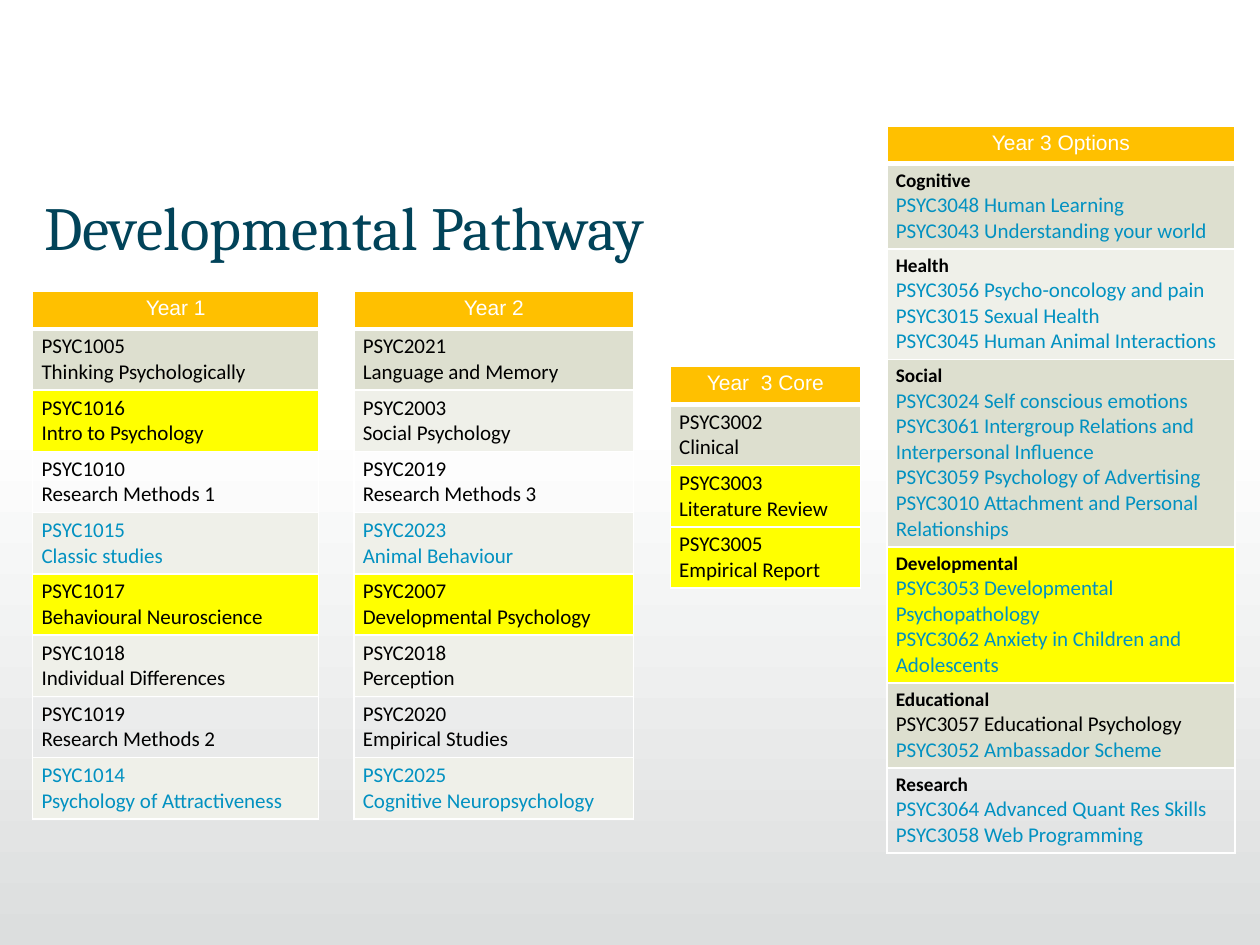
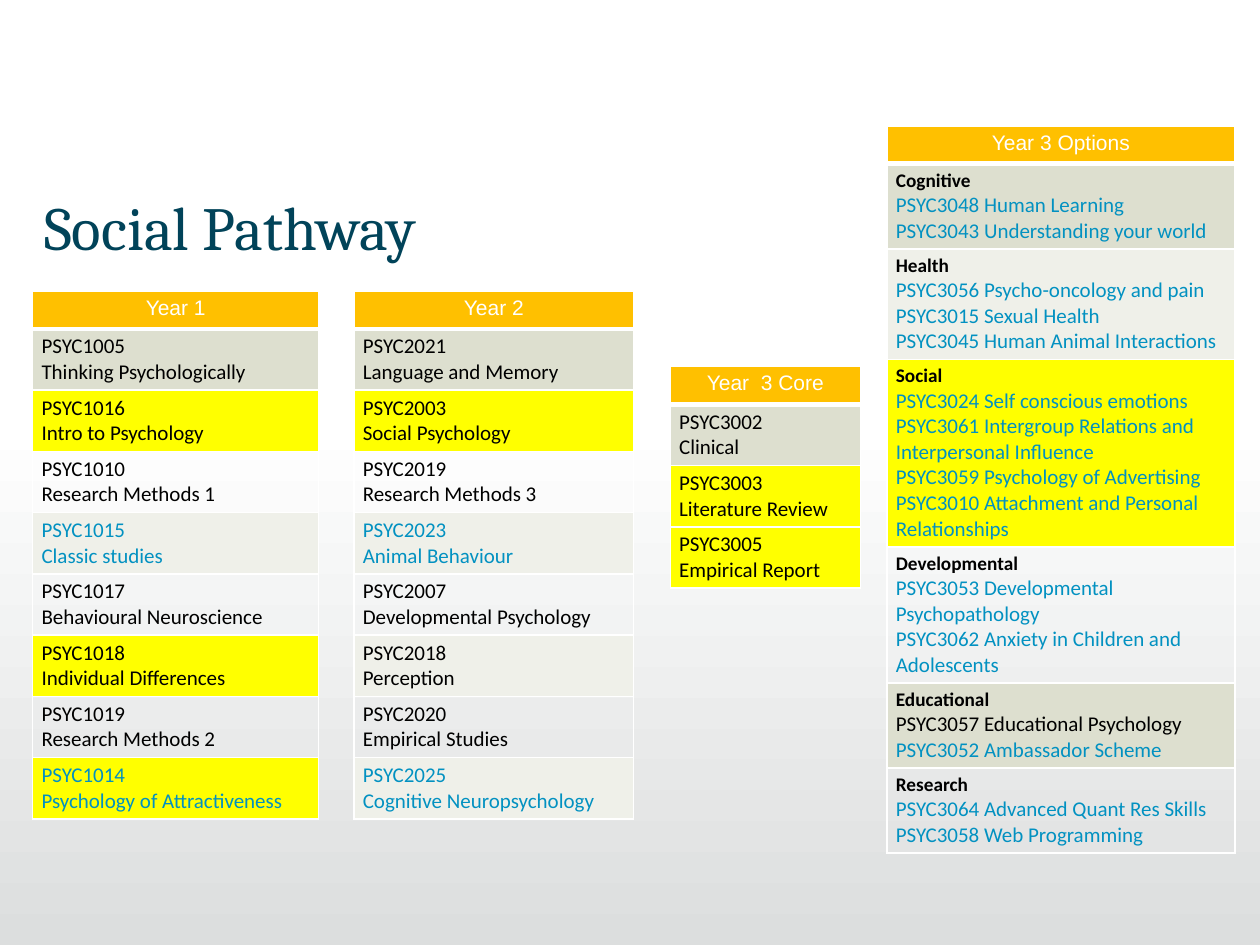
"""Build the pathway slides: four module tables with each pathway's rows marked."""
from pptx import Presentation
from pptx.dml.color import RGBColor
from pptx.enum import shapes, text
from pptx.oxml import parse_xml
from pptx.oxml.ns import nsdecls
from pptx.util import Inches, Pt

WHITE, BLACK, BLUE, NAVY = "FFFFFF", "000000", "0291C1", "014359"
GOLD, YELLOW, GREY = "FFC000", "FFFF00", "DCDEDE"
SHADES = {"dark": "DDDFCF", "light": "EFF0E9", "none": None}
YEAR_SHADES = ["dark", "light"] + ["none", "light"] * 3
HEAD, ROW = 0.3, 0.47

YEAR1 = [
    ("PSYC1005", "Thinking Psychologically"),
    ("PSYC1016", "Intro to Psychology"),
    ("PSYC1010", "Research Methods 1"),
    ("PSYC1015", "Classic studies"),
    ("PSYC1017", "Behavioural Neuroscience"),
    ("PSYC1018", "Individual Differences"),
    ("PSYC1019", "Research Methods 2"),
    ("PSYC1014", "Psychology of Attractiveness"),
]
YEAR2 = [
    ("PSYC2021", "Language and Memory"),
    ("PSYC2003", "Social Psychology"),
    ("PSYC2019", "Research Methods 3"),
    ("PSYC2023", "Animal Behaviour"),
    ("PSYC2007", "Developmental Psychology"),
    ("PSYC2018", "Perception"),
    ("PSYC2020", "Empirical Studies"),
    ("PSYC2025", "Cognitive Neuropsychology"),
]
CORE = [
    ("PSYC3002", "Clinical"),
    ("PSYC3003", "Literature Review"),
    ("PSYC3005", "Empirical Report"),
]
OPTIONS = [
    ("Cognitive", "PSYC3048 Human Learning", "PSYC3043 Understanding your world"),
    ("Health", "PSYC3056 Psycho-oncology and pain", "PSYC3015 Sexual Health",
     "PSYC3045 Human Animal Interactions"),
    ("Social", "PSYC3024 Self conscious emotions",
     "PSYC3061 Intergroup Relations and Interpersonal Influence",
     "PSYC3059 Psychology of Advertising",
     "PSYC3010 Attachment and Personal Relationships"),
    ("Developmental", "PSYC3053 Developmental Psychopathology",
     "PSYC3062 Anxiety in Children and Adolescents"),
    ("Educational", "PSYC3057 Educational Psychology", "PSYC3052 Ambassador Scheme"),
    ("Research", "PSYC3064 Advanced Quant Res Skills", "PSYC3058 Web Programming"),
]
OPTION_SHADES = ["dark", "light", "dark", "none", "dark", "none"]
OPTION_ROWS = [0.65, 0.85, 1.45, 1.05, 0.65, 0.65]

ELECTIVE = {"PSYC1015", "PSYC1014", "PSYC2023", "PSYC2025"}
REQUIRED = "PSYC3057"
SHARED = {"PSYC1016", "PSYC3003", "PSYC3005"}
PATHS = {
    "Developmental Pathway": {"PSYC1017", "PSYC2007", "Developmental"},
    "Social Pathway": {"PSYC1018", "PSYC1014", "PSYC2003", "Social"},
}


def color(code):
    """Turn a hex string into a colour."""
    return RGBColor.from_string(code)


def write(para, words, size=12, font="Calibri", ink=BLACK, bold=False, align=None):
    """Put formatted words into a paragraph."""
    para.alignment = align
    run = para.add_run()
    run.text = words
    run.font.size, run.font.name, run.font.bold = Pt(size), font, bold
    run.font.color.rgb = color(ink)


def border(cell, **widths):
    """Draw white borders of the given point widths on a cell's sides."""
    props = cell._tc.get_or_add_tcPr()
    for side in "LRTB":
        if side in widths:
            props.append(parse_xml(
                f'<a:ln{side} {nsdecls("a")} w="{Pt(widths[side])}"><a:solidFill>'
                f'<a:srgbClr val="{WHITE}"/></a:solidFill></a:ln{side}>'))


def paint(cell, fill):
    """Set a cell's margins and its fill, or leave it clear."""
    cell.margin_left = cell.margin_right = Inches(0.07)
    cell.margin_top = cell.margin_bottom = Inches(0.04)
    if fill:
        cell.fill.solid()
        cell.fill.fore_color.rgb = color(fill)
    else:
        cell.fill.background()


def style(lines, spot):
    """Choose the format of one line in a row of modules."""
    if not lines[0].startswith("PSYC"):
        if spot == 0:
            return {"size": 11, "bold": True}
        return {"ink": BLACK if lines[spot].startswith(REQUIRED) else BLUE}
    return {"ink": BLUE if lines[0] in ELECTIVE else BLACK}


def grid(slide, left, top, width, head, rows, marked, shades=YEAR_SHADES, sizes=None):
    """Add a one-column table of modules under a gold heading."""
    sizes = [HEAD] + (sizes or [ROW] * len(rows))
    table = slide.shapes.add_table(len(sizes), 1, Inches(left), Inches(top),
                                   Inches(width), Inches(sum(sizes))).table
    table.first_row = table.horz_banding = False
    for row, size in zip(table.rows, sizes):
        row.height = Inches(size)
    cell = table.cell(0, 0)
    border(cell, L=1, R=1, T=1, B=3)
    paint(cell, GOLD)
    write(cell.text_frame.paragraphs[0], head, font="Arial", ink=WHITE,
          align=text.PP_ALIGN.CENTER)
    for index, (lines, shade) in enumerate(zip(rows, shades), 1):
        cell = table.cell(index, 0)
        border(cell, L=1, R=1, B=1)
        paint(cell, YELLOW if lines[0] in marked else SHADES[shade])
        frame = cell.text_frame
        for spot, line in enumerate(lines):
            para = frame.add_paragraph() if spot else frame.paragraphs[0]
            write(para, line, **style(lines, spot))


def title(slide, words):
    """Place and format the slide title."""
    box = slide.shapes.title
    box.left, box.top = Inches(0.35), Inches(1.45)
    box.width, box.height = Inches(9.29), Inches(0.53)
    frame = box.text_frame
    frame.auto_size = text.MSO_AUTO_SIZE.NONE
    frame.vertical_anchor = text.MSO_ANCHOR.TOP
    frame.margin_left, frame.margin_right = 0, Inches(0.1)
    frame.margin_top = frame.margin_bottom = Inches(0.05)
    write(frame.paragraphs[0], words, size=35, font="Cambria", ink=NAVY,
          align=text.PP_ALIGN.LEFT)


def band(deck, slide):
    """Draw the fading lower band and move it to the slide master."""
    shape = slide.shapes.add_shape(shapes.MSO_SHAPE.RECTANGLE, Inches(-0.09),
                                   Inches(3.33), Inches(10.09), Inches(4.17))
    shape.shadow.inherit = False
    shape.line.fill.background()
    shape.fill.gradient()
    shape.fill.gradient_angle = 270
    for stop, tone in zip(shape.fill.gradient_stops, (WHITE, GREY)):
        stop.color.rgb = color(tone)
    shape.element.nvSpPr.cNvPr.id = 99
    deck.slide_master.shapes.element.insert(2, shape.element)


def main():
    """Build and save the deck."""
    deck = Presentation()
    deck.slide_width, deck.slide_height = Inches(10), Inches(7.5)
    for name, chosen in PATHS.items():
        slide = deck.slides.add_slide(deck.slide_layouts[5])
        if len(deck.slides) == 1:
            band(deck, slide)
        marked = SHARED | chosen
        title(slide, name)
        grid(slide, 0.26, 2.31, 2.27, "Year 1", YEAR1, marked)
        grid(slide, 2.81, 2.31, 2.22, "Year 2", YEAR2, marked)
        grid(slide, 5.32, 2.91, 1.51, "Year  3 Core", CORE, marked)
        grid(slide, 7.04, 1, 2.76, "Year 3 Options", OPTIONS, marked,
             OPTION_SHADES, OPTION_ROWS)
    deck.save("out.pptx")


if __name__ == "__main__":
    main()
